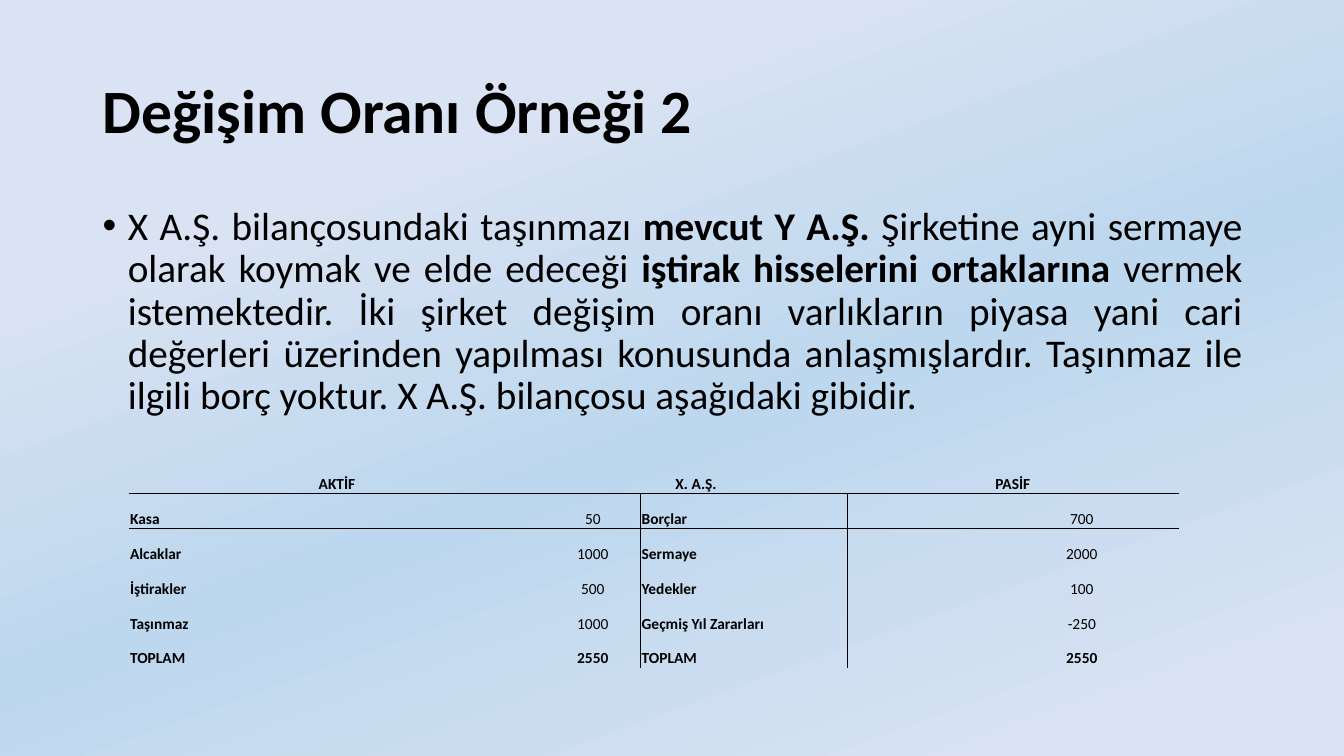
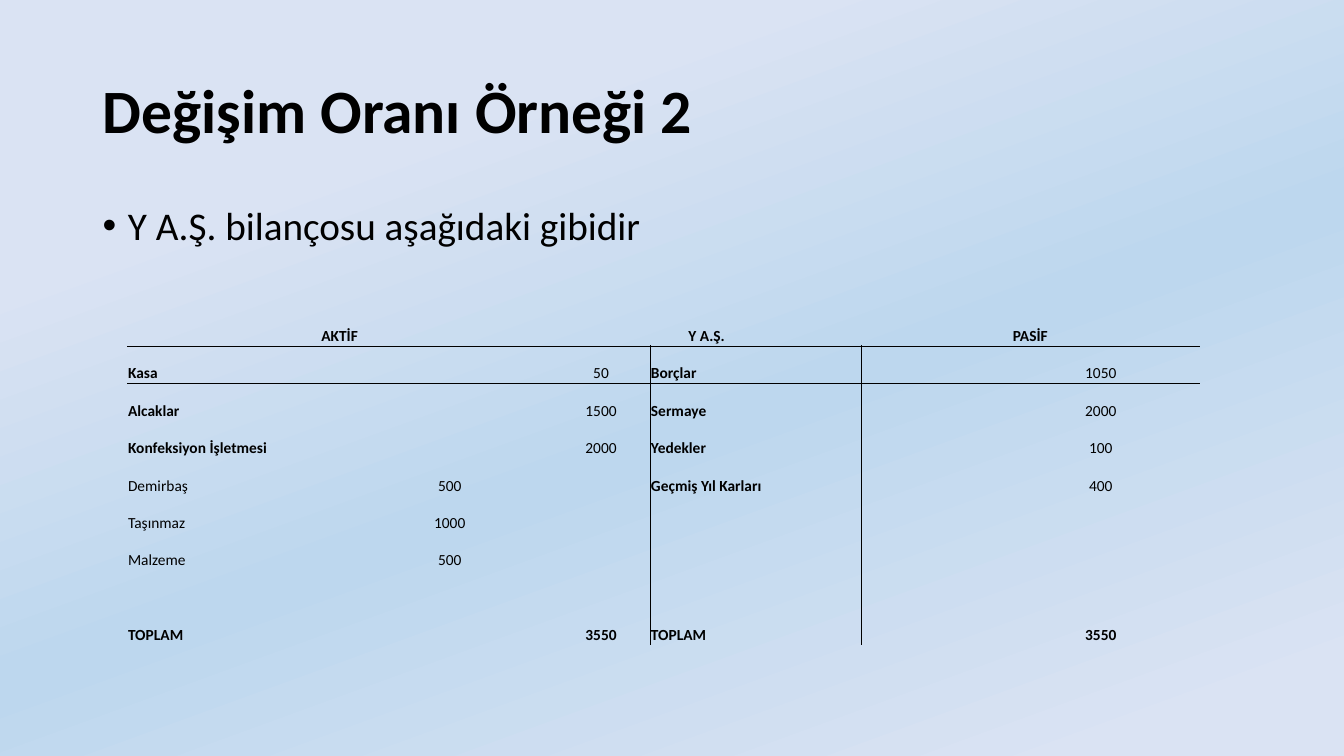
from dataclasses import dataclass

from lxml import etree
from pptx import Presentation
from pptx.dml.color import RGBColor
from pptx.enum.text import MSO_ANCHOR, PP_ALIGN
from pptx.oxml.ns import qn
from pptx.presentation import Presentation as Deck
from pptx.slide import Slide
from pptx.table import Table, _Cell
from pptx.text.text import TextFrame, _Paragraph
from pptx.util import Inches, Pt

LEFT, CENTER, JUSTIFY = PP_ALIGN.LEFT, PP_ALIGN.CENTER, PP_ALIGN.JUSTIFY
TOP, MIDDLE, BOTTOM = MSO_ANCHOR.TOP, MSO_ANCHOR.MIDDLE, MSO_ANCHOR.BOTTOM

BLANK_LAYOUT = 6
PLAIN_TABLE_STYLE = "{2D5ABB26-0587-4C30-8999-92F81FD0307C}"
COLUMN_WIDTHS = (2.14, 1.99, 0.95, 2.05, 1.37, 1.92)
LABEL, DETAIL, AMOUNT = 0, 1, 2
LIABILITY_LABEL, LIABILITY_AMOUNT = 3, 5


@dataclass(frozen=True)
class Theme:
    font: str = "Calibri"
    ink: str = "000000"
    gradient: tuple[tuple[int, str], ...] = ((23, "DAE3F3"), (55, "BDD7EE"), (93, "DAE3F3"))
    gradient_angle: int = 70
    title_size: int = 44
    body_size: int = 28
    table_size: int = 11
    rule_width: float = 0.5
    line_spacing: float = 0.9


@dataclass(frozen=True)
class Box:
    left: float
    top: float
    width: float
    height: float


@dataclass(frozen=True)
class TextRun:
    text: str
    bold: bool = False


@dataclass(frozen=True)
class Account:
    label: str
    amount: str
    is_detail: bool = False


@dataclass(frozen=True)
class BalanceSheet:
    company: str
    box: Box
    row_count: int
    assets: tuple[Account, ...]
    liabilities: tuple[Account, ...]
    total: str


@dataclass(frozen=True)
class Example:
    body: tuple[TextRun, ...]
    alignment: PP_ALIGN
    balance_sheet: BalanceSheet


THEME = Theme()
TITLE = TextRun("Değişim Oranı Örneği 2", bold=True)
TITLE_BOX = Box(0.92, 0.4, 11.5, 1.45)
BODY_BOX = Box(0.92, 2, 11.5, 4.76)

EXAMPLES = (
    Example(
        body=(
            TextRun("X A.Ş. bilançosundaki taşınmazı "),
            TextRun("mevcut Y A.Ş. ", bold=True),
            TextRun("Şirketine ayni sermaye olarak koymak ve elde edeceği "),
            TextRun("iştirak hisselerini ortaklarına ", bold=True),
            TextRun(
                "vermek istemektedir. İki şirket değişim oranı varlıkların piyasa yani cari "
                "değerleri üzerinden yapılması konusunda anlaşmışlardır. Taşınmaz ile ilgili "
                "borç yoktur. X A.Ş. bilançosu aşağıdaki gibidir."
            ),
        ),
        alignment=JUSTIFY,
        balance_sheet=BalanceSheet(
            company="X. A.Ş.",
            box=Box(1.28, 4.55, 10.41, 2.08),
            row_count=6,
            assets=(
                Account("Kasa", "50"),
                Account("Alcaklar", "1000"),
                Account("İştirakler", "500"),
                Account("Taşınmaz", "1000"),
            ),
            liabilities=(
                Account("Borçlar", "700"),
                Account("Sermaye", "2000"),
                Account("Yedekler", "100"),
                Account("Geçmiş Yıl Zararları", "-250"),
            ),
            total="2550",
        ),
    ),
    Example(
        body=(TextRun("Y A.Ş. bilançosu aşağıdaki gibidir"),),
        alignment=LEFT,
        balance_sheet=BalanceSheet(
            company="Y A.Ş.",
            box=Box(1.26, 3.06, 10.64, 3.34),
            row_count=9,
            assets=(
                Account("Kasa", "50"),
                Account("Alcaklar", "1500"),
                Account("Konfeksiyon İşletmesi", "2000"),
                Account("Demirbaş", "500", is_detail=True),
                Account("Taşınmaz", "1000", is_detail=True),
                Account("Malzeme", "500", is_detail=True),
            ),
            liabilities=(
                Account("Borçlar", "1050"),
                Account("Sermaye", "2000"),
                Account("Yedekler", "100"),
                Account("Geçmiş Yıl Karları", "400"),
            ),
            total="3550",
        ),
    ),
)


def set_gradient_background(presentation: Deck) -> None:
    """Give the slide master the gradient that every slide inherits."""
    master = presentation.slide_master
    fill = master.background.fill
    fill.gradient()
    fill.gradient_angle = 360 - THEME.gradient_angle
    stop_list = master.element.find(".//" + qn("p:bg")).find(".//" + qn("a:gsLst"))
    for stop in list(stop_list):
        stop_list.remove(stop)
    for percent, color in THEME.gradient:
        stop = etree.SubElement(stop_list, qn("a:gs"), pos=str(percent * 1000))
        etree.SubElement(stop, qn("a:srgbClr"), val=color)


def add_run(paragraph: _Paragraph, text_run: TextRun, size: int) -> None:
    run = paragraph.add_run()
    run.text = text_run.text
    run.font.name = THEME.font
    run.font.size = Pt(size)
    run.font.bold = text_run.bold
    run.font.color.rgb = RGBColor.from_string(THEME.ink)


def add_text_frame(slide: Slide, box: Box, anchor: MSO_ANCHOR) -> TextFrame:
    shape = slide.shapes.add_textbox(
        Inches(box.left), Inches(box.top), Inches(box.width), Inches(box.height)
    )
    text_frame = shape.text_frame
    text_frame.word_wrap = True
    text_frame.vertical_anchor = anchor
    text_frame.paragraphs[0].line_spacing = THEME.line_spacing
    return text_frame


def add_bullet(paragraph: _Paragraph) -> None:
    properties = paragraph._p.get_or_add_pPr()
    properties.set("marL", str(Inches(0.25)))
    properties.set("indent", str(Inches(-0.25)))
    etree.SubElement(properties, qn("a:buFont"), typeface="Arial")
    etree.SubElement(properties, qn("a:buChar"), char="•")


def add_title(slide: Slide) -> None:
    paragraph = add_text_frame(slide, TITLE_BOX, MIDDLE).paragraphs[0]
    add_run(paragraph, TITLE, THEME.title_size)


def add_body(slide: Slide, example: Example) -> None:
    paragraph = add_text_frame(slide, BODY_BOX, TOP).paragraphs[0]
    paragraph.alignment = example.alignment
    paragraph.space_before = Pt(10)
    add_bullet(paragraph)
    for text_run in example.body:
        add_run(paragraph, text_run, THEME.body_size)


def border_sides(row: int, column: int) -> list[str]:
    """Name the ruled sides of a cell, in the order the file format asks for."""
    sides = {
        "a:lnL": row > 0 and column == LIABILITY_LABEL,
        "a:lnR": row > 0 and column == AMOUNT,
        "a:lnT": row == 1,
        "a:lnB": row == 0,
    }
    return [side for side, is_ruled in sides.items() if is_ruled]


def format_cell(cell: _Cell, sides: list[str]) -> None:
    cell.margin_left = cell.margin_right = cell.margin_top = Inches(0.01)
    cell.margin_bottom = 0
    cell.vertical_anchor = BOTTOM
    cell.fill.background()
    properties = cell._tc.get_or_add_tcPr()
    for position, side in enumerate(sides):
        line = etree.Element(qn(side), w=str(Pt(THEME.rule_width)))
        fill = etree.SubElement(line, qn("a:solidFill"))
        etree.SubElement(fill, qn("a:srgbClr"), val=THEME.ink)
        properties.insert(position, line)


def write_cell(cell: _Cell, text: str, bold: bool, alignment: PP_ALIGN) -> None:
    paragraph = cell.text_frame.paragraphs[0]
    paragraph.alignment = alignment
    add_run(paragraph, TextRun(text, bold), THEME.table_size)


def write_account(
    table: Table, row: int, columns: tuple[int, int], account: Account, is_total: bool = False
) -> None:
    label_column, amount_column = columns
    write_cell(table.cell(row, label_column), account.label, not account.is_detail, LEFT)
    write_cell(table.cell(row, amount_column), account.amount, is_total, CENTER)


def add_balance_sheet(slide: Slide, sheet: BalanceSheet) -> None:
    box = sheet.box
    frame = slide.shapes.add_table(
        sheet.row_count, len(COLUMN_WIDTHS),
        Inches(box.left), Inches(box.top), Inches(box.width), Inches(box.height),
    )
    frame.element.find(".//" + qn("a:tableStyleId")).text = PLAIN_TABLE_STYLE
    table = frame.table
    table.first_row = table.horz_banding = False
    scale = box.width / sum(COLUMN_WIDTHS)
    for column, width in zip(table.columns, COLUMN_WIDTHS):
        column.width = Inches(width * scale)
    for row_index, row in enumerate(table.rows):
        row.height = Inches(box.height / sheet.row_count)
        for column_index, cell in enumerate(row.cells):
            format_cell(cell, border_sides(row_index, column_index))

    for index, heading in enumerate(("AKTİF", sheet.company, "PASİF")):
        cell = table.cell(0, 2 * index)
        cell.merge(table.cell(0, 2 * index + 1))
        write_cell(cell, heading, True, CENTER)

    asset_columns = (LABEL, AMOUNT)
    liability_columns = (LIABILITY_LABEL, LIABILITY_AMOUNT)
    for row_index, account in enumerate(sheet.assets, start=1):
        columns = (LABEL, DETAIL) if account.is_detail else asset_columns
        write_account(table, row_index, columns, account)
    for row_index, account in enumerate(sheet.liabilities, start=1):
        write_account(table, row_index, liability_columns, account)
    total = Account("TOPLAM", sheet.total)
    for columns in (asset_columns, liability_columns):
        write_account(table, sheet.row_count - 1, columns, total, is_total=True)


def main() -> None:
    presentation = Presentation()
    presentation.slide_width = Inches(13.33)
    presentation.slide_height = Inches(7.5)
    set_gradient_background(presentation)
    for example in EXAMPLES:
        slide = presentation.slides.add_slide(presentation.slide_layouts[BLANK_LAYOUT])
        add_title(slide)
        add_body(slide, example)
        add_balance_sheet(slide, example.balance_sheet)
    presentation.save("out.pptx")


if __name__ == "__main__":
    main()
